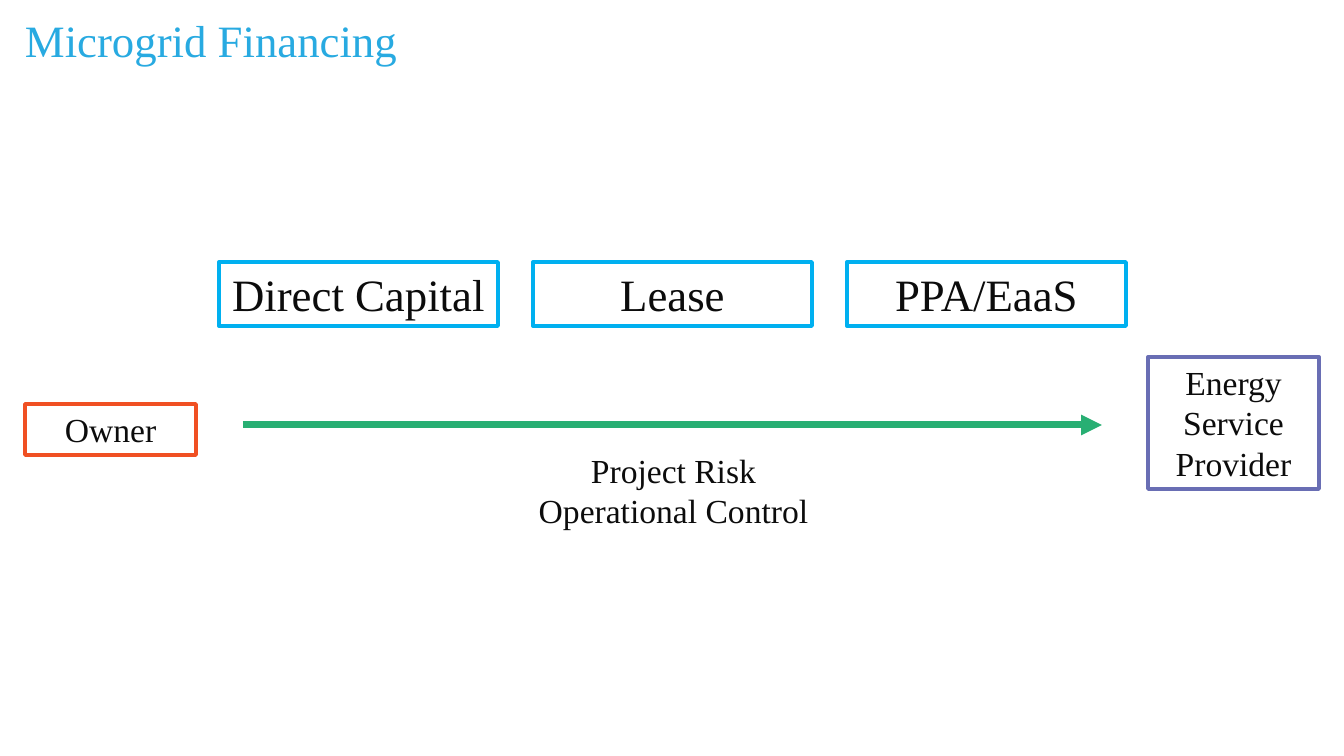
from dataclasses import dataclass

from lxml import etree
from pptx import Presentation
from pptx import util as u
from pptx.dml.color import RGBColor
from pptx.enum import shapes, text
from pptx.oxml import ns

EMU_PER_PX = 914400 / 100.8


@dataclass(frozen=True)
class Theme:
    font: str = "Times New Roman"
    title: str = "28AAE1"
    ink: str = "0C0C0C"
    owner: str = "F05023"
    provider: str = "696EB4"
    option: str = "00B0F0"
    arrow: str = "28AF73"
    large: int = 32
    medium: int = 24
    outline: float = 2.75
    arrow_width: float = 5


def px(length):
    return u.Emu(round(length * EMU_PER_PX))


class Page:
    def __init__(self, deck, theme):
        self.theme = theme
        self.shapes = deck.slides.add_slide(deck.slide_layouts[6]).shapes

    def add_lines(self, box, lines, size, color, align):
        frame = box.text_frame
        frame.word_wrap = True
        for index, line in enumerate(lines):
            para = frame.paragraphs[0] if index == 0 else frame.add_paragraph()
            para.alignment = align
            span = para.add_run()
            span.text = line
            span.font.name = self.theme.font
            span.font.size = u.Pt(size)
            span.font.color.rgb = RGBColor.from_string(color)
        return frame

    def title(self, place, words):
        box = self.shapes.add_textbox(*map(px, place))
        frame = self.add_lines(box, [words], self.theme.large,
                               self.theme.title, text.PP_ALIGN.LEFT)
        frame.margin_left = frame.margin_right = 0
        frame.margin_top = frame.margin_bottom = 0
        frame.paragraphs[0].line_spacing = 0.85

    def label(self, place, lines):
        box = self.shapes.add_textbox(*map(px, place))
        self.add_lines(box, lines, self.theme.medium, self.theme.ink,
                       text.PP_ALIGN.CENTER)

    def outlined_box(self, place, words, size, color):
        box = self.shapes.add_shape(shapes.MSO_SHAPE.RECTANGLE, *map(px, place))
        box.shadow.inherit = False
        box.fill.background()
        box.line.color.rgb = RGBColor.from_string(color)
        box.line.width = u.Pt(self.theme.outline)
        frame = self.add_lines(box, [words], size, self.theme.ink,
                               text.PP_ALIGN.CENTER)
        frame.vertical_anchor = text.MSO_ANCHOR.TOP

    def arrow(self, start, end, color):
        arrow = self.shapes.add_connector(shapes.MSO_CONNECTOR.STRAIGHT,
                                          *map(px, start + end))
        arrow.line.color.rgb = RGBColor.from_string(color)
        arrow.line.width = u.Pt(self.theme.arrow_width)
        properties = arrow._element.spPr
        outline = properties.find(ns.qn("a:ln"))
        etree.SubElement(outline, ns.qn("a:tailEnd"), type="triangle")
        etree.SubElement(properties, ns.qn("a:effectLst"))


def main():
    deck = Presentation()
    deck.slide_width, deck.slide_height = px(1344), px(756)
    theme = Theme()
    page = Page(deck, theme)

    page.title((25, 21, 968, 97), "Microgrid Financing")
    page.outlined_box((25, 404, 171, 51), "Owner", theme.medium, theme.owner)
    page.outlined_box((1148, 357, 171, 132), "Energy Service Provider",
                      theme.medium, theme.provider)
    page.arrow((243, 425), (1102, 425), theme.arrow)
    page.label((498, 445, 351, 92), ["Project Risk", "Operational Control"])
    for index, option in enumerate(["Direct Capital", "Lease", "PPA/EaaS"]):
        page.outlined_box((219 + 314 * index, 262, 279, 64), option,
                          theme.large, theme.option)

    deck.save("out.pptx")


if __name__ == "__main__":
    main()
